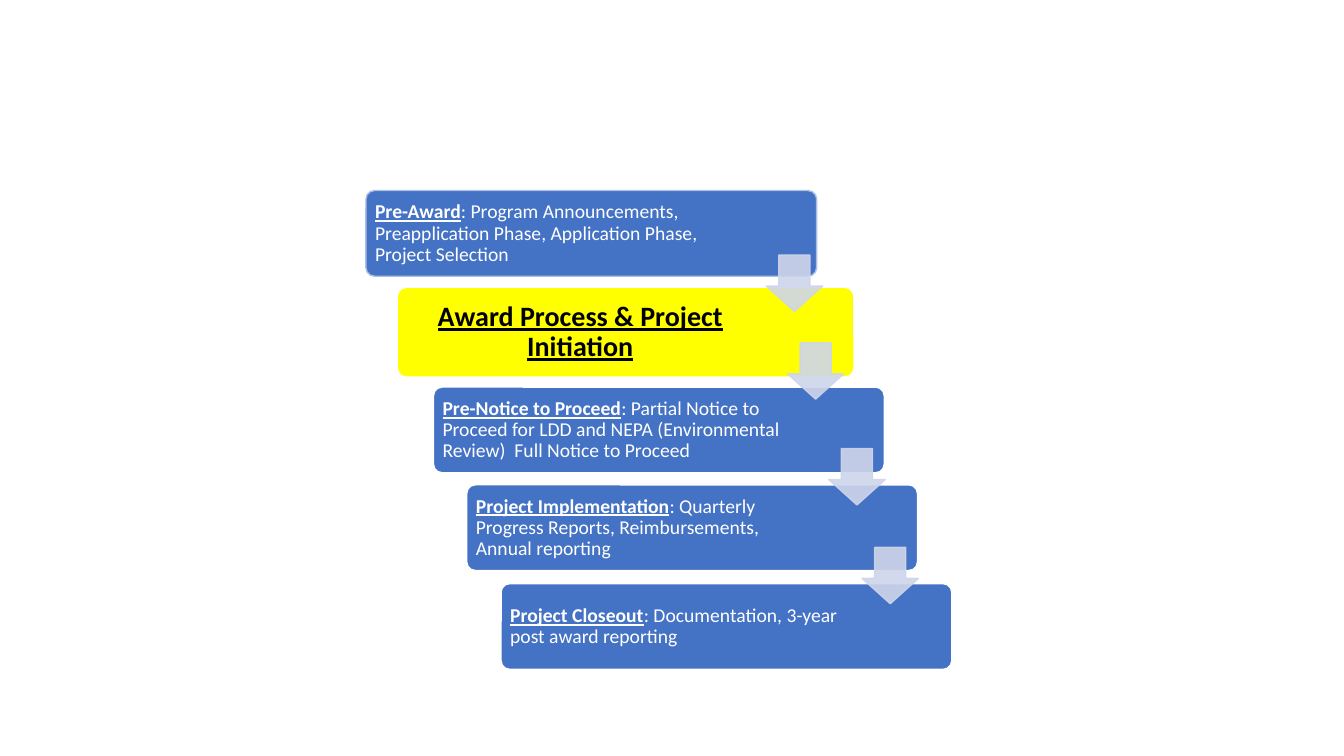
from lxml.etree import SubElement
from pptx import Presentation
from pptx.dml.color import RGBColor
from pptx.enum.shapes import MSO_SHAPE
from pptx.enum.text import MSO_ANCHOR, PP_ALIGN
from pptx.oxml.ns import qn
from pptx.util import Pt

EMU_PER_PX = 9144
BLUE, YELLOW, WHITE, BLACK = "4472C4", "FFFF00", "FFFFFF", "000000"
PALE_BLUE, ARROW_GREY = "ABC0E4", "CFD5EA"
BODY = {"name": "Calibri", "size": Pt(14), "bold": False, "underline": False}
HEADING = BODY | {"bold": True, "underline": True}
CURRENT = HEADING | {"size": Pt(20)}

STEPS = [
    ((363, 189, 447, 85), 345, PALE_BLUE, "Pre-Award",
     ": Program Announcements, Preapplication Phase, Application Phase, Project Selection"),
    ((394, 285, 453, 89), 357, WHITE, "Award Process & Project Initiation", ""),
    ((430, 384, 447, 85), 353, WHITE, "Pre-Notice to Proceed",
     ": Partial Notice to Proceed for LDD and NEPA (Environmental Review)  Full Notice to Proceed"),
    ((463, 481, 447, 85), 353, WHITE, "Project Implementation",
     ": Quarterly Progress Reports, Reimbursements, Annual reporting"),
    ((497, 579, 447, 85), 353, WHITE, "Project Closeout",
     ": Documentation, 3-year post award reporting"),
]
ARROWS = [(760, 253), (781, 340), (822, 445), (855, 543)]
ARROW_SIZE = 56


def px(*lengths):
    """Turn px lengths into EMU."""
    return [length * EMU_PER_PX for length in lengths]


def rgb(code):
    """Turn a hex string into a colour."""
    return RGBColor.from_string(code)


def set_attrs(target, values):
    """Set each attribute named in a dict."""
    for name, value in values.items():
        setattr(target, name, value)


def add_block(s, kind, box, fill, line, adjustments):
    """Add a filled preset shape with a thin outline."""
    sp = s.shapes.add_shape(kind, *px(*box))
    sp.shadow.inherit = False
    sp.fill.solid()
    sp.fill.fore_color.rgb = rgb(fill)
    sp.line.color.rgb = rgb(line)
    sp.line.width = Pt(1)
    for i, value in enumerate(adjustments):
        sp.adjustments[i] = value
    return sp


def add_run(p, text, font, color):
    """Add a formatted run to a paragraph."""
    r = p.add_run()
    r.text = text
    set_attrs(r.font, font)
    r.font.color.rgb = rgb(color)


def add_step(s, box, text_width, line, heading, detail):
    """Add one step of the staircase; a step without detail is the current one."""
    left, top, _, height = box
    add_block(s, MSO_SHAPE.ROUNDED_RECTANGLE, box, BLUE if detail else YELLOW, line, [0.1])
    tf = s.shapes.add_textbox(*px(left + 3, top + 3, text_width, height - 5)).text_frame
    inset, = px(6 if detail else 8)
    sides = ("margin_left", "margin_top", "margin_right", "margin_bottom")
    set_attrs(tf, dict.fromkeys(sides, inset)
              | {"word_wrap": True, "vertical_anchor": MSO_ANCHOR.MIDDLE})
    p = tf.paragraphs[0]
    set_attrs(p, {"line_spacing": 0.9,
                  "alignment": PP_ALIGN.LEFT if detail else PP_ALIGN.CENTER})
    if detail:
        add_run(p, heading, HEADING, WHITE)
        add_run(p, detail, BODY, WHITE)
    else:
        add_run(p, heading, CURRENT, BLACK)


def add_arrow(s, left, top):
    """Add a slightly transparent arrow leading to the next step."""
    sp = add_block(s, MSO_SHAPE.DOWN_ARROW, (left, top, ARROW_SIZE, ARROW_SIZE),
                   ARROW_GREY, ARROW_GREY, [0.55, 0.45])
    for color in sp._element.spPr.iter(qn("a:srgbClr")):
        SubElement(color, qn("a:alpha"), val="90000")


def main():
    """Build the slide and save it."""
    prs = Presentation()
    prs.slide_width, prs.slide_height = px(1333, 750)
    s = prs.slides.add_slide(prs.slide_layouts[6])
    for step in STEPS:
        add_step(s, *step)
    for left, top in ARROWS:
        add_arrow(s, left, top)
    prs.save("out.pptx")


if __name__ == "__main__":
    main()
